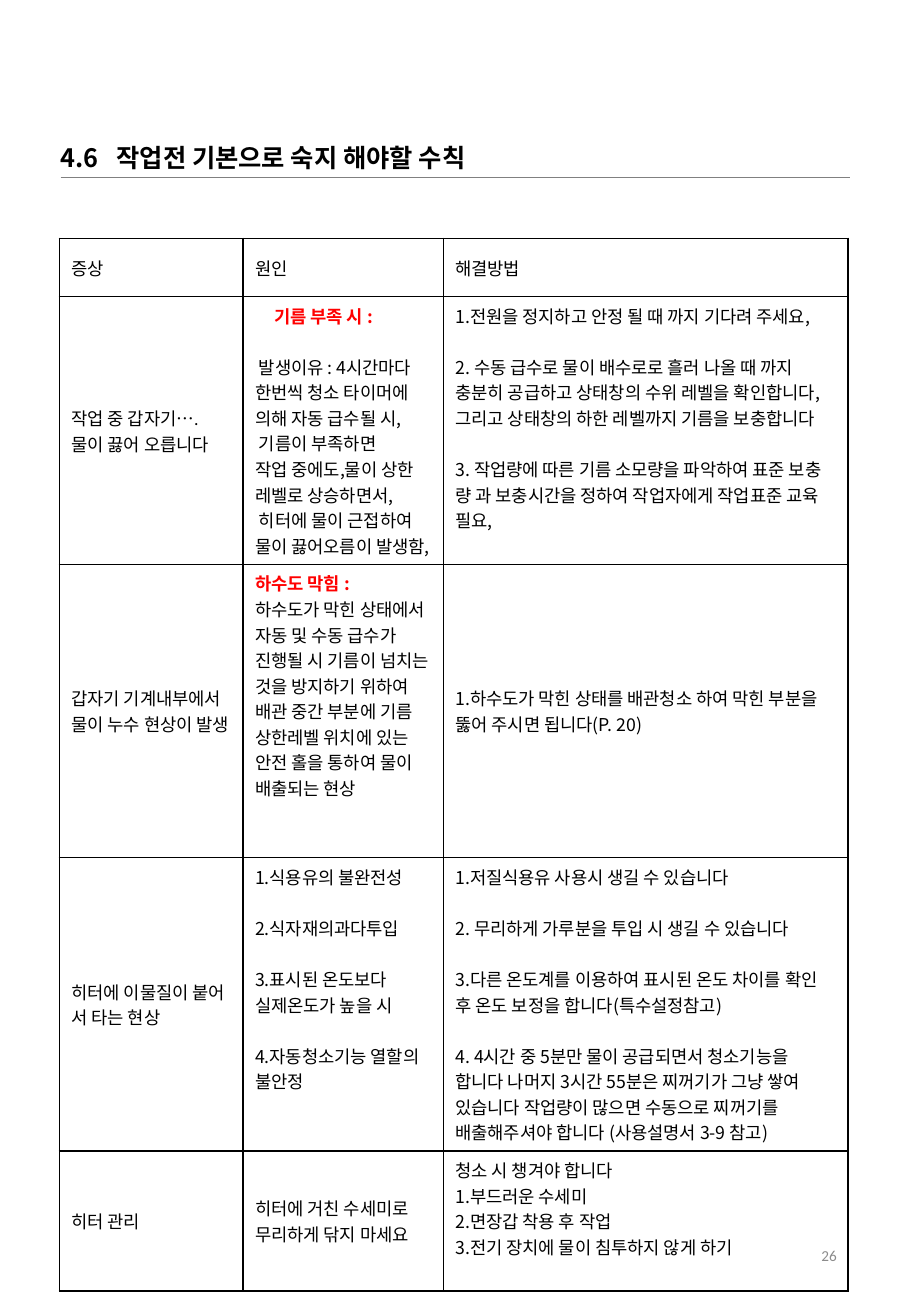
from collections import namedtuple
from lxml import etree
from pptx import Presentation
from pptx import util as u
from pptx.dml.color import RGBColor
from pptx.enum import shapes, text
from pptx.oxml import ns

HUES = {"ink": "000000", "alert": "FF0000", "rule": "808080", "page": "8C8C8C"}
SANS, LATIN = "Noto Sans CJK KR", "Calibri"
LINE = 15.2
TOP, MID = text.MSO_ANCHOR.TOP, text.MSO_ANCHOR.MIDDLE
Para = namedtuple("Para", "words gap hue inset", defaults=(0, "ink", 0))
Cell = namedtuple("Cell", "paras anchor font", defaults=(MID, SANS))


def plain(*lines, anchor=MID, font=SANS):
    return Cell([Para(line) for line in lines], anchor, font)


def spaced(*lines):
    return Cell([Para(line, LINE if i else 0) for i, line in enumerate(lines)], TOP)


ROWS = [
    [plain("증상"), plain("원인"), plain("해결방법")],
    [
        plain("작업 중 갑자기….", "물이 끓어 오릅니다", font=LATIN),
        Cell([
            Para("기름 부족 시 :", hue="alert", inset=0.4),
            Para(" 발생이유 : 4시간마다 한번씩 청소 타이머에 의해 자동 급수될 시,", LINE),
            Para(" 기름이 부족하면"),
            Para("작업 중에도,물이 상한 레벨로 상승하면서,"),
            Para(" 히터에 물이 근접하여 물이 끓어오름이 발생함,"),
        ], TOP),
        Cell([
            Para("1.전원을 정지하고 안정 될 때 까지 기다려 주세요,"),
            Para("2. 수동 급수로 물이 배수로로 흘러 나올 때 까지 충분히 공급하고 "
                 "상태창의 수위 레벨을 확인합니다,", LINE),
            Para("그리고 상태창의 하한 레벨까지 기름을 보충합니다"),
            Para("3. 작업량에 따른 기름 소모량을 파악하여 표준 보충 량 과 "
                 "보충시간을 정하여 작업자에게 작업표준 교육 필요,", LINE),
        ], TOP),
    ],
    [
        plain("갑자기 기계내부에서 물이 누수 현상이 발생"),
        Cell([
            Para("하수도 막힘 :", hue="alert"),
            Para("하수도가 막힌 상태에서 자동 및 수동 급수가 진행될 시 기름이 "
                 "넘치는 것을 방지하기 위하여"),
            Para("배관 중간 부분에 기름 상한레벨 위치에 있는"),
            Para("안전 홀을 통하여 물이 배출되는 현상"),
        ], TOP),
        plain("1.하수도가 막힌 상태를 배관청소 하여 막힌 부분을 뚫어 주시면 됩니다(P. 20)"),
    ],
    [
        plain("히터에 이물질이 붙어 서 타는 현상", font=LATIN),
        spaced("1.식용유의 불완전성", "2.식자재의과다투입",
               "3.표시된 온도보다 실제온도가 높을 시", "4.자동청소기능 열할의 불안정"),
        spaced("1.저질식용유 사용시 생길 수 있습니다",
               "2. 무리하게 가루분을 투입 시 생길 수 있습니다",
               "3.다른 온도계를 이용하여 표시된 온도 차이를 확인 후 "
               "온도 보정을 합니다(특수설정참고)",
               "4. 4시간 중 5분만 물이 공급되면서 청소기능을 합니다 나머지 "
               "3시간 55분은 찌꺼기가 그냥 쌓여 있습니다 작업량이 많으면 수동으로 "
               "찌꺼기를 배출해주셔야 합니다 (사용설명서 3-9 참고)"),
    ],
    [
        plain("히터 관리"),
        plain("히터에 거친 수세미로", "무리하게 닦지 마세요"),
        plain("청소 시 챙겨야 합니다", "1.부드러운 수세미", "2.면장갑 착용 후 작업",
              "3.전기 장치에 물이 침투하지 않게 하기", anchor=TOP),
    ],
]


def node(parent, tag, **attrs):
    return etree.SubElement(parent, ns.qn(tag), attrs)


def tint(name):
    return RGBColor.from_string(HUES[name])


def write(para, words, size, hue="ink", bold=False, font=SANS):
    run = para.add_run()
    run.text = words
    run.font.size = u.Pt(size)
    run.font.name = font
    run.font.bold = bold
    run.font.color.rgb = tint(hue)
    node(run.font._element, "a:ea", typeface=SANS)


def frame(cell):
    props = cell._tc.get_or_add_tcPr()
    for side in "LRTB":
        edge = node(props, "a:ln" + side, w=str(u.Pt(1)))
        node(node(edge, "a:solidFill"), "a:srgbClr", val=HUES["ink"])
    cell.fill.background()


def fill(cell, item):
    frame(cell)
    cell.vertical_anchor = item.anchor
    body = cell.text_frame
    for i, part in enumerate(item.paras):
        para = body.add_paragraph() if i else body.paragraphs[0]
        if part.gap:
            para.space_before = u.Pt(part.gap)
        if part.inset:
            para._p.get_or_add_pPr().set("marL", str(u.Cm(part.inset)))
        write(para, part.words, 10.5, part.hue, part.hue == "alert", item.font)


def box(slide, left, top, width, height):
    body = slide.shapes.add_textbox(
        u.Cm(left), u.Cm(top), u.Cm(width), u.Cm(height)).text_frame
    body.word_wrap = True
    return body


def title(slide, left, top, width):
    body = box(slide, left - 0.25, top, 12.78, 1.22)
    body.auto_size = text.MSO_AUTO_SIZE.SHAPE_TO_FIT_TEXT
    para = body.paragraphs[0]
    para.line_spacing = 1.5
    tabs = node(para._p.get_or_add_pPr(), "a:tabLst")
    node(tabs, "a:tab", pos=str(u.Cm(1.17)), algn="l")
    write(para, "4.6\t작업전 기본으로 숙지 해야할 수칙", 15, bold=True)
    level = u.Cm(top + 1.17)
    rule = slide.shapes.add_connector(
        shapes.MSO_CONNECTOR.STRAIGHT, u.Cm(left), level, u.Cm(left + width), level)
    rule.line.color.rgb = tint("rule")
    rule.line.width = u.Pt(1)
    node(rule._element.spPr, "a:effectLst")


def guide(slide, left, top):
    widths = [3.84, 4.19, 8.46]
    heights = [1.22, 5.6, 6.13, 6.13, 2.93]
    grid = slide.shapes.add_table(
        len(heights), len(widths), u.Cm(left), u.Cm(top),
        u.Cm(sum(widths)), u.Cm(sum(heights))).table
    for col, width in zip(grid.columns, widths):
        col.width = u.Cm(width)
    for row, height, items in zip(grid.rows, heights, ROWS):
        row.height = u.Cm(height)
        for cell, item in zip(row.cells, items):
            fill(cell, item)


def folio(slide, left, top):
    body = box(slide, left, top, 4.29, 1.47)
    body.vertical_anchor = MID
    para = body.paragraphs[0]
    para.alignment = text.PP_ALIGN.RIGHT
    write(para, "26", 9, "page", font=LATIN)


def main():
    deck = Presentation()
    deck.slide_width, deck.slide_height = u.Cm(19.05), u.Cm(27.51)
    slide = deck.slides.add_slide(deck.slide_layouts[6])
    folio(slide, 13.46, 25.5)
    title(slide, 1.27, 2.54, 16.51)
    guide(slide, 1.24, 4.98)
    deck.save("out.pptx")


if __name__ == "__main__":
    main()
